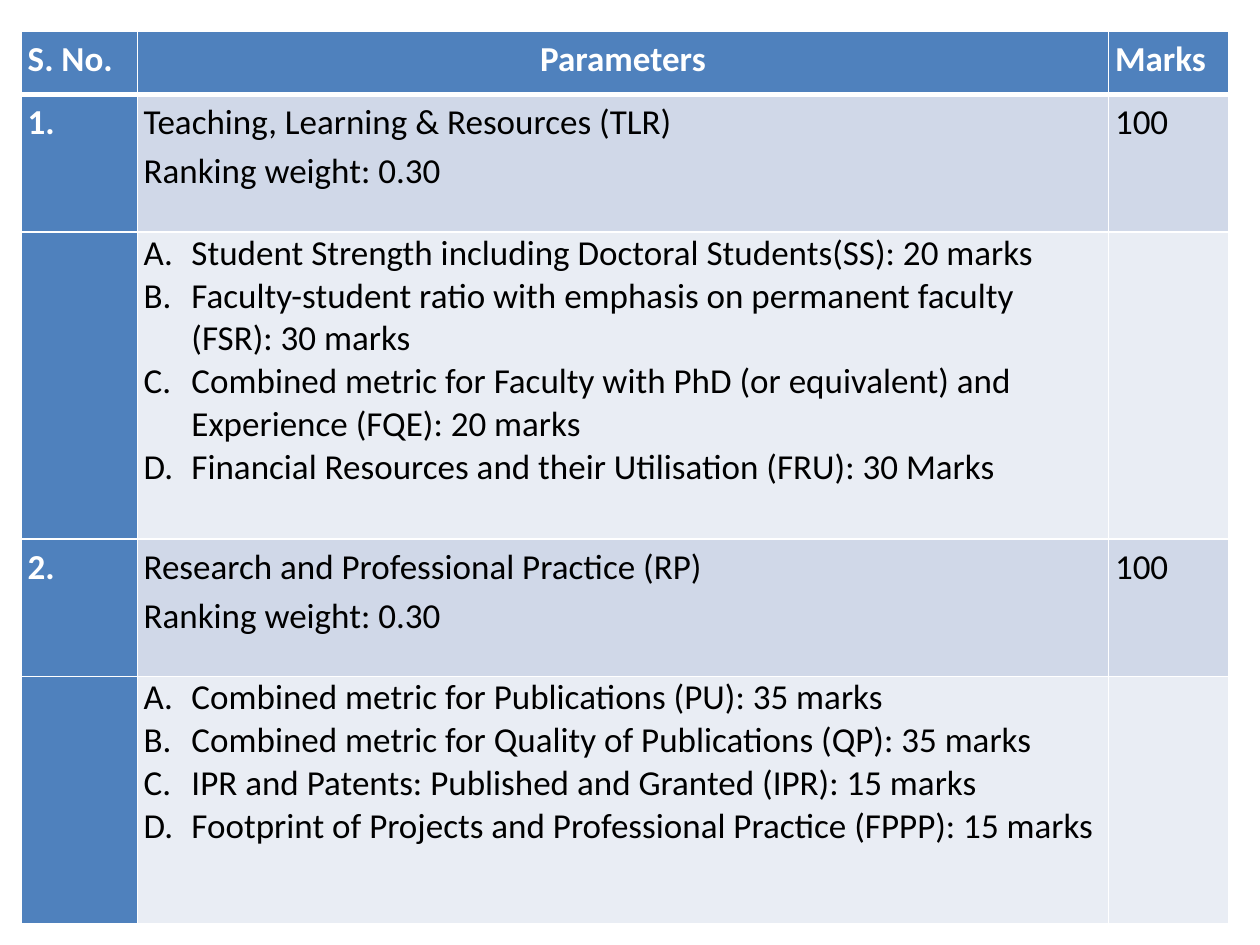
import pptx
import pptx.util
import pptx.dml.color
import pptx.enum.text
import pptx.oxml
import pptx.oxml.ns
from lxml import etree

Inches = pptx.util.Inches
Pt = pptx.util.Pt

COLORS = {
    "accent": "4F81BD",
    "band": "D0D8E8",
    "light": "E9EDF4",
    "white": "FFFFFF",
    "black": "000000",
}
HEADERS = ["S. No.", "Parameters", "Marks"]
SECTIONS = [
    (
        "1.",
        ["Teaching, Learning & Resources (TLR)", "Ranking weight: 0.30"],
        "100",
        [
            "Student Strength including Doctoral Students(SS): 20 marks",
            "Faculty-student ratio with emphasis on permanent faculty (FSR): 30 marks",
            "Combined metric for Faculty with PhD (or equivalent) and Experience (FQE): 20 marks",
            "Financial Resources and their Utilisation (FRU): 30 Marks",
        ],
    ),
    (
        "2.",
        ["Research and Professional Practice (RP)", "Ranking weight: 0.30"],
        "100",
        [
            "Combined metric for Publications (PU): 35 marks",
            "Combined metric for Quality of Publications (QP): 35 marks",
            "IPR and Patents: Published and Granted (IPR): 15 marks",
            "Footprint of Projects and Professional Practice (FPPP): 15 marks",
        ],
    ),
]
COLUMN_WIDTHS = [0.92, 7.71, 0.95]
ROW_HEIGHTS = [0.5, 1.09, 2.44, 1.09, 1.96]
CELL_FORMAT = {
    "margin_left": Inches(0.05),
    "margin_right": Inches(0.05),
    "margin_top": 0,
    "margin_bottom": 0,
}
LABEL_FORMAT = {"line_spacing": 1.15, "space_after": Pt(10)}
HEADING_FORMAT = {"line_spacing": 1.15}
LIST_FORMAT = {"line_spacing": 1.0}
CENTERED_FORMAT = {**LABEL_FORMAT, "alignment": pptx.enum.text.PP_ALIGN.CENTER}


def set_attributes(target, values):
    for name, value in values.items():
        setattr(target, name, value)


def rgb(name):
    return pptx.dml.color.RGBColor.from_string(COLORS[name])


def add_borders(cell, widths):
    properties = cell._tc.get_or_add_tcPr()
    for side in "LRTB":
        line = etree.SubElement(
            properties, pptx.oxml.ns.qn(f"a:ln{side}"), w=str(Pt(widths.get(side, 1)))
        )
        fill = etree.SubElement(line, pptx.oxml.ns.qn("a:solidFill"))
        etree.SubElement(fill, pptx.oxml.ns.qn("a:srgbClr"), val=COLORS["white"])


def add_letter(paragraph):
    properties = paragraph._p.get_or_add_pPr()
    properties.set("marL", str(Inches(0.38)))
    properties.set("indent", str(Inches(-0.38)))
    etree.SubElement(properties, pptx.oxml.ns.qn("a:buFont"), typeface="+mj-lt")
    etree.SubElement(properties, pptx.oxml.ns.qn("a:buAutoNum"), type="alphaUcPeriod")


def fill_cell(cell, lines, fill, paragraph_format, borders, lettered=False):
    set_attributes(cell, CELL_FORMAT)
    add_borders(cell, borders)
    cell.fill.solid()
    cell.fill.fore_color.rgb = rgb(fill)
    on_accent = fill == "accent"
    cell.text = "\n".join(lines)
    for paragraph in cell.text_frame.paragraphs:
        set_attributes(paragraph, paragraph_format)
        if lettered:
            add_letter(paragraph)
        for run in paragraph.runs:
            set_attributes(
                run.font, {"name": "Calibri", "size": Pt(20), "bold": on_accent}
            )
            run.font.color.rgb = rgb("white" if on_accent else "black")


def add_marks_table(slide, left, top, width, height):
    table = slide.shapes.add_table(
        len(ROW_HEIGHTS), len(COLUMN_WIDTHS), left, top, width, height
    ).table
    for column, column_width in zip(table.columns, COLUMN_WIDTHS):
        column.width = Inches(column_width)
    for row, row_height in zip(table.rows, ROW_HEIGHTS):
        row.height = Inches(row_height)

    header_formats = [LABEL_FORMAT, CENTERED_FORMAT, LABEL_FORMAT]
    for column, (header, header_format) in enumerate(zip(HEADERS, header_formats)):
        fill_cell(table.cell(0, column), [header], "accent", header_format, {"B": 3})

    for index, (number, heading, marks, criteria) in enumerate(SECTIONS):
        row = 1 + 2 * index
        borders = {"T": 3} if row == 1 else {}
        fill_cell(table.cell(row, 0), [number], "accent", LABEL_FORMAT, borders)
        fill_cell(table.cell(row, 1), heading, "band", HEADING_FORMAT, borders)
        fill_cell(table.cell(row, 2), [marks], "band", LABEL_FORMAT, borders)
        fill_cell(table.cell(row + 1, 0), [], "accent", LIST_FORMAT, {})
        fill_cell(table.cell(row + 1, 1), criteria, "light", LIST_FORMAT, {}, True)
        fill_cell(table.cell(row + 1, 2), [], "light", LIST_FORMAT, {})


def main():
    presentation = pptx.Presentation()
    presentation.slide_width = Inches(10)
    presentation.slide_height = Inches(7.5)
    slide = presentation.slides.add_slide(presentation.slide_layouts[6])
    add_marks_table(slide, Inches(0.17), Inches(0.25), Inches(9.58), Inches(7.08))
    presentation.save("out.pptx")


if __name__ == "__main__":
    main()
